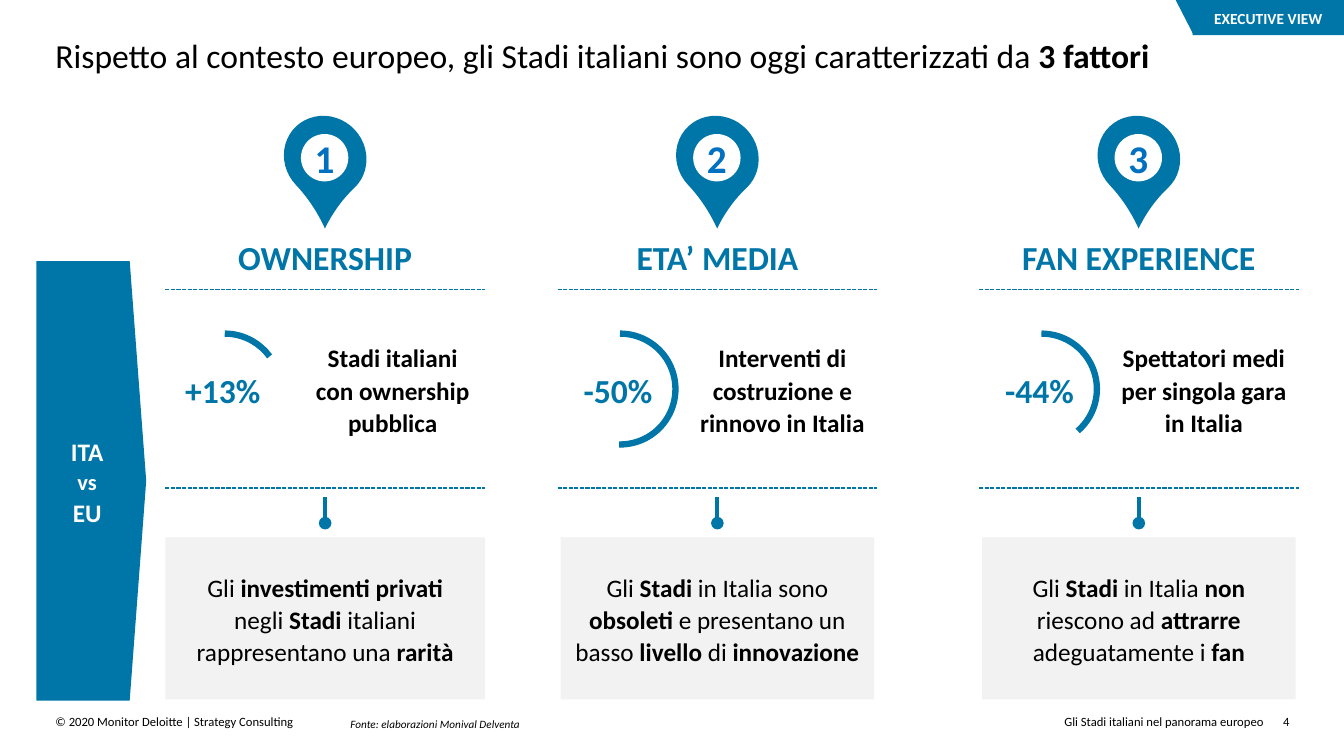
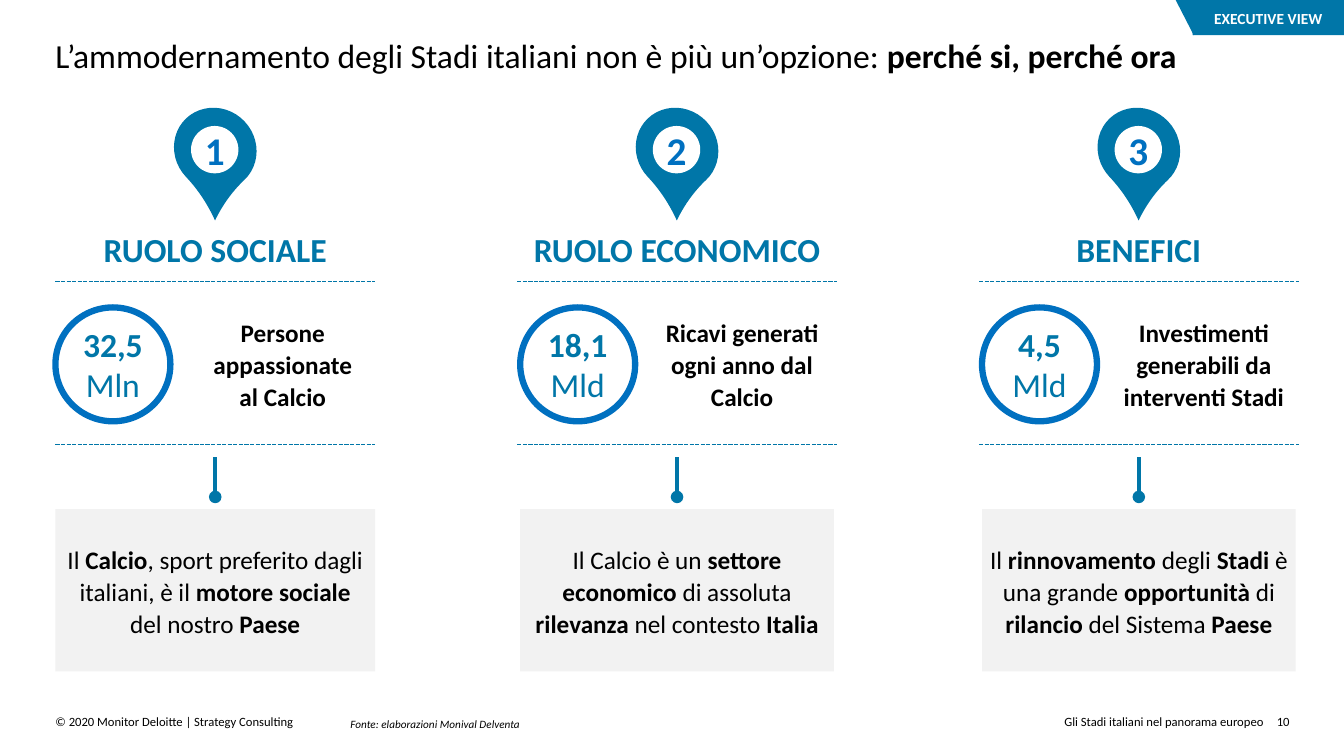
from dataclasses import dataclass
from typing import Optional

import lxml.etree
import pptx
import pptx.dml.color
import pptx.enum.dml
import pptx.enum.shapes
import pptx.enum.text
import pptx.oxml.ns
import pptx.shapes.autoshape
import pptx.shapes.connector
import pptx.slide
import pptx.util

Inches = pptx.util.Inches
Pt = pptx.util.Pt
Shape = pptx.shapes.autoshape.Shape
Connector = pptx.shapes.connector.Connector
Slide = pptx.slide.Slide
KIND = pptx.enum.shapes.MSO_SHAPE
ALIGN = pptx.enum.text.PP_ALIGN
ANCHOR = pptx.enum.text.MSO_ANCHOR
Frame = tuple[float, float, float, float]

FONT = "Calibri"
COLORS = {
    "teal": "0076A8",
    "blue": "0070C0",
    "card": "F2F2F2",
    "black": "000000",
    "white": "FFFFFF",
}
COLUMN_WIDTH = 3.17
LINE_SPACING = 1.06
NO_INSET = (0, 0, 0, 0)
BODY_INSET = (0.08, 0.08, 0.08, 0.08)
BAND_INSET = (0.1, 0.1, 0.1, 0.1)


@dataclass(frozen=True)
class Factor:
    left: float
    heading: str
    figure: str
    caption: str
    message: str
    arc_end: Optional[float] = None
    card_inset: float = 0.03
    caption_width: float = 1.88


@dataclass(frozen=True)
class Rows:
    """Top edges of the parts that every column of a slide shares."""
    pin: float
    caption: float
    lower_rule: float
    stem_top: float
    stem_bottom: float
    card: float


@dataclass(frozen=True)
class View:
    title: str
    number: int
    rows: Rows
    factors: tuple[Factor, ...]
    side_band: bool = False


VIEWS = (
    View(
        "Rispetto al contesto europeo, gli Stadi italiani sono oggi "
        "caratterizzati da *3 fattori*",
        4,
        Rows(1.14, 3.23, 4.84, 4.93, 5.19, 5.33),
        (
            Factor(1.64, "OWNERSHIP", "*+13%*",
                   "Stadi italiani con ownership pubblica",
                   "Gli *investimenti privati*\vnegli *Stadi* italiani\v"
                   "rappresentano una *rarità*",
                   194.38, 0, 1.83),
            Factor(5.53, "ETA’ MEDIA", "*-50%*",
                   "Interventi di costruzione e rinnovo in Italia",
                   "Gli *Stadi* in Italia sono *obsoleti* e presentano un "
                   "basso *livello* di *innovazione*",
                   54.62),
            Factor(9.71, "FAN EXPERIENCE", "*-44%*",
                   "Spettatori medi per singola gara in Italia",
                   "Gli *Stadi* in Italia *non* riescono ad *attrarre* "
                   "adeguatamente i *fan*",
                   29.47),
        ),
        side_band=True,
    ),
    View(
        "L’ammodernamento degli Stadi italiani non è più un’opzione: "
        "*perché si, perché ora*",
        10,
        Rows(1.06, 2.98, 4.41, 4.53, 4.93, 5.05),
        (
            Factor(0.55, "RUOLO SOCIALE", "*32,5*\nMln",
                   "Persone appassionate\nal Calcio",
                   "Il *Calcio*, sport preferito dagli italiani, è il "
                   "*motore sociale* del nostro *Paese*",
                   card_inset=0, caption_width=1.83),
            Factor(5.13, "RUOLO ECONOMICO", "*18,1*\nMld",
                   "Ricavi generati ogni anno dal Calcio",
                   "Il Calcio è un *settore economico* di assoluta "
                   "*rilevanza* nel contesto *Italia*"),
            Factor(9.71, "BENEFICI", "*4,5*\nMld",
                   "Investimenti generabili da interventi Stadi",
                   "Il *rinnovamento* degli *Stadi* è una grande "
                   "*opportunità* di *rilancio* del Sistema *Paese*"),
        ),
    ),
)


def rgb(name: str) -> pptx.dml.color.RGBColor:
    return pptx.dml.color.RGBColor.from_string(COLORS[name])


def write(box: Shape, text: str, size: float, color: str = "black",
          align: ALIGN = ALIGN.CENTER, anchor: ANCHOR = ANCHOR.MIDDLE,
          inset: Frame = NO_INSET, spacing: float = 1.0,
          bold: bool = False, italic: bool = False) -> None:
    """Fill a box: asterisks toggle bold, \\n starts a paragraph, \\v a line."""
    frame = box.text_frame
    left, top, right, bottom = map(Inches, inset)
    frame_format = {
        "word_wrap": True,
        "auto_size": pptx.enum.text.MSO_AUTO_SIZE.NONE,
        "vertical_anchor": anchor,
        "margin_left": left, "margin_top": top,
        "margin_right": right, "margin_bottom": bottom,
    }
    for name, value in frame_format.items():
        setattr(frame, name, value)
    for index, line in enumerate(text.split("\n")):
        para = frame.add_paragraph() if index else frame.paragraphs[0]
        para.alignment = align
        para.line_spacing = spacing
        for part, words in enumerate(line.split("*")):
            for row, piece in enumerate(words.split("\v")):
                if row:
                    para.add_line_break()
                if not piece:
                    continue
                span = para.add_run()
                span.text = piece
                span_format = {"name": FONT, "size": Pt(size),
                               "bold": bold or part % 2 == 1, "italic": italic}
                for name, value in span_format.items():
                    setattr(span.font, name, value)
                span.font.color.rgb = rgb(color)


def add_text(page: Slide, frame: Frame, text: str, size: float,
             **options) -> Shape:
    box = page.shapes.add_textbox(*map(Inches, frame))
    write(box, text, size, **options)
    return box


def add_shape(page: Slide, kind: KIND, frame: Frame,
              fill: Optional[str] = None, line: Optional[str] = None,
              weight: float = 4.5, rotation: float = 0,
              adjustments: tuple[float, ...] = ()) -> Shape:
    shape = page.shapes.add_shape(kind, *map(Inches, frame))
    shape.shadow.inherit = False
    shape.rotation = rotation
    for index, value in enumerate(adjustments):
        shape.adjustments[index] = value
    if fill:
        shape.fill.solid()
        shape.fill.fore_color.rgb = rgb(fill)
    else:
        shape.fill.background()
    if line:
        shape.line.color.rgb = rgb(line)
        shape.line.width = Pt(weight)
    else:
        shape.line.fill.background()
    return shape


def add_line(page: Slide, start: tuple[float, float],
             end: tuple[float, float], weight: float) -> Connector:
    connector = page.shapes.add_connector(
        pptx.enum.shapes.MSO_CONNECTOR.STRAIGHT, *map(Inches, start + end))
    connector.line.color.rgb = rgb("teal")
    connector.line.width = Pt(weight)
    lxml.etree.SubElement(connector.element.spPr,
                          pptx.oxml.ns.qn("a:effectLst"))
    return connector


def add_rule(page: Slide, left: float, top: float) -> None:
    rule = add_line(page, (left, top), (left + COLUMN_WIDTH, top), 1)
    rule.line.dash_style = pptx.enum.dml.MSO_LINE.SQUARE_DOT


def add_stem(page: Slide, center: float, rows: Rows) -> None:
    """Draw the short line that ends in a dot above a card."""
    stem = add_line(page, (center, rows.stem_bottom),
                    (center, rows.stem_top), 3)
    outline = stem.element.spPr.find(pptx.oxml.ns.qn("a:ln"))
    lxml.etree.SubElement(outline, pptx.oxml.ns.qn("a:headEnd"), type="oval")


def add_pin(page: Slide, center: float, top: float, number: int) -> None:
    add_shape(page, KIND.TEAR, (center - 0.4, top, 0.8, 0.84), "teal",
              rotation=136.6, adjustments=(1.22,))
    add_shape(page, KIND.OVAL, (center - 0.24, top + 0.19, 0.47, 0.47),
              "white")
    add_text(page, (center - 0.26, top + 0.19, 0.51, 0.48), str(number), 28,
             color="blue", bold=True)


def add_figure(page: Slide, factor: Factor, top: float) -> None:
    """Draw the key figure inside its ring or partial ring."""
    left = factor.left + factor.card_inset
    ring = None if factor.arc_end else "blue"
    disc = add_shape(page, KIND.OVAL, (left, top, 1.14, 1.13), "white", ring)
    write(disc, factor.figure, 24, "teal", inset=(0, 0.1, 0, 0.1))
    if factor.arc_end:
        add_shape(page, KIND.ARC, (left + 0.04, top + 0.01, 1.1, 1.1),
                  line="teal", adjustments=(162, factor.arc_end))


def add_factor(page: Slide, factor: Factor, number: int, rows: Rows) -> None:
    center = factor.left + COLUMN_WIDTH / 2
    right = factor.left + COLUMN_WIDTH
    add_pin(page, center, rows.pin, number)
    add_text(page, (center - 1.71, rows.pin + 1.17, 3.42, 0.48),
             factor.heading, 24, color="teal", bold=True)
    add_rule(page, factor.left, rows.pin + 1.73)
    add_figure(page, factor, rows.caption + 0.07)
    add_text(page, (right - factor.caption_width, rows.caption,
                    factor.caption_width, 1.26),
             factor.caption, 18, bold=True, inset=BODY_INSET,
             spacing=LINE_SPACING)
    add_rule(page, factor.left, rows.lower_rule)
    add_stem(page, center, rows)
    card = add_shape(page, KIND.RECTANGLE,
                     (factor.left + factor.card_inset, rows.card,
                      COLUMN_WIDTH - 2 * factor.card_inset, 1.61), "card")
    write(card, factor.message, 18, inset=BODY_INSET, spacing=LINE_SPACING)


def add_side_band(page: Slide) -> None:
    band = add_shape(page, KIND.PENTAGON, (0.36, 2.59, 1.09, 4.36), "teal",
                     adjustments=(0.15,))
    write(band, "ITA\nvs\nEU", 18, "white", inset=BAND_INSET,
          spacing=LINE_SPACING, bold=True)
    band.text_frame.paragraphs[1].runs[0].font.size = Pt(16)


def add_common_parts(page: Slide, view: View) -> None:
    title = page.shapes.title
    position = dict(zip(("left", "top", "width", "height"),
                        map(Inches, (0.55, 0.35, 12.24, 0.76))))
    for name, value in position.items():
        setattr(title, name, value)
    write(title, view.title, 24, align=ALIGN.LEFT, anchor=ANCHOR.TOP)

    tag = add_shape(page, KIND.RECTANGLE, (11.83, 0, 1.5, 0.35), "teal")
    write(tag, "EXECUTIVE VIEW", 11, "white", inset=BAND_INSET,
          spacing=LINE_SPACING, bold=True)
    add_shape(page, KIND.RIGHT_TRIANGLE, (11.66, 0, 0.18, 0.35), "teal",
              rotation=180)

    footers = (
        (0.55, 2.6, "© 2020 Monitor Deloitte | Strategy Consulting",
         ALIGN.LEFT),
        (7.18, 5.35, "Gli Stadi italiani nel panorama europeo", ALIGN.RIGHT),
        (12.45, 0.34, str(view.number), ALIGN.RIGHT),
    )
    for left, width, text, align in footers:
        add_text(page, (left, 7.08, width, 0.15), text, 9, align=align,
                 anchor=ANCHOR.TOP)
    add_text(page, (3.3, 7.06, 1.86, 0.24),
             "Fonte: elaborazioni Monival Delventa", 8, align=ALIGN.RIGHT,
             anchor=ANCHOR.BOTTOM, inset=(0.04, 0.05, 0, 0.05), italic=True)


def main() -> None:
    deck = pptx.Presentation()
    deck.slide_width = Inches(13.33)
    deck.slide_height = Inches(7.5)
    for view in VIEWS:
        page = deck.slides.add_slide(deck.slide_layouts[5])
        add_common_parts(page, view)
        for number, factor in enumerate(view.factors, 1):
            add_factor(page, factor, number, view.rows)
        if view.side_band:
            add_side_band(page)
    deck.save("out.pptx")


if __name__ == "__main__":
    main()
